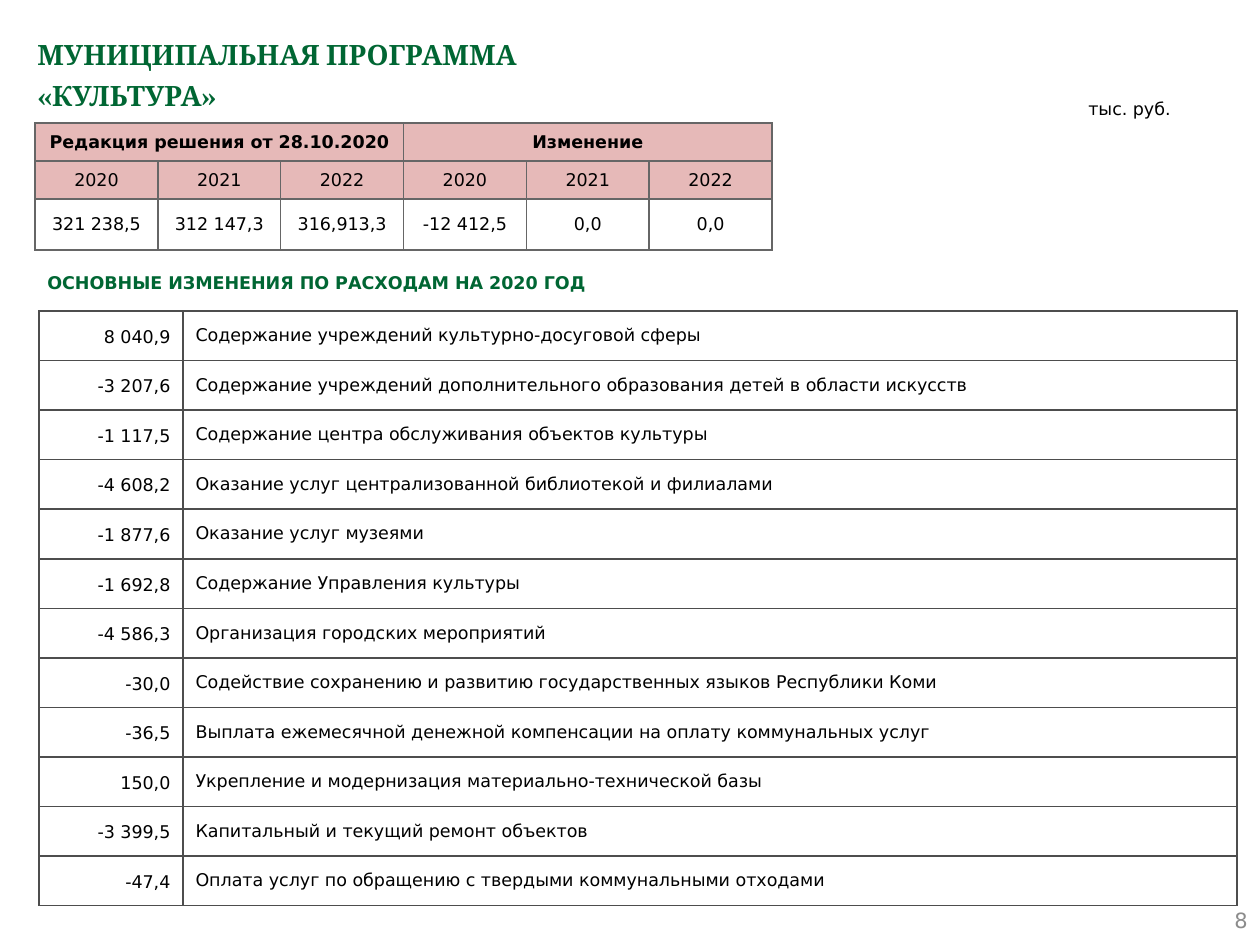
from lxml import etree
from pptx import Presentation
from pptx import util as u
from pptx.dml import color
from pptx.enum import shapes, text
from pptx.oxml import ns

HUES = {"green": "006633", "black": "000000", "gray": "8C8C8C",
        "pink": "E6B9B8", "grid": "4D4D4D", "rim": "666666"}
SANS = "DejaVu Sans"
LEFT, MID, RIGHT = text.PP_ALIGN.LEFT, text.PP_ALIGN.CENTER, text.PP_ALIGN.RIGHT
TOP, CENTER = text.MSO_ANCHOR.TOP, text.MSO_ANCHOR.MIDDLE

TOTALS = [
    ["Редакция решения от 28.10.2020", "", "", "Изменение", "", ""],
    ["2020", "2021", "2022"] * 2,
    ["321 238,5", "312 147,3", "316,913,3", "-12 412,5", "0,0", "0,0"],
]
CHANGES = [
    ("8 040,9", "Содержание учреждений культурно-досуговой сферы"),
    ("-3 207,6", "Содержание учреждений дополнительного образования детей в области искусств"),
    ("-1 117,5", "Содержание центра обслуживания объектов культуры"),
    ("-4 608,2", "Оказание услуг централизованной библиотекой и филиалами"),
    ("-1 877,6", "Оказание услуг музеями"),
    ("-1 692,8", "Содержание Управления культуры"),
    ("-4 586,3", "Организация городских мероприятий"),
    ("-30,0", "Содействие сохранению и развитию государственных языков Республики Коми"),
    ("-36,5", "Выплата ежемесячной денежной компенсации на оплату коммунальных услуг"),
    ("150,0", "Укрепление и модернизация материально-технической базы"),
    ("-3 399,5", "Капитальный и текущий ремонт объектов"),
    ("-47,4", "Оплата услуг по обращению с твердыми коммунальными отходами"),
]


def px(n):
    return u.Emu(round(n * 914400 / 126))


class Page:
    """Holds the style and the current slide."""

    def __init__(self, deck):
        self.slide = deck.slides.add_slide(deck.slide_layouts[6])

    def fill_in(self, frame, words, size=10, hue="black", bold=False,
                align=LEFT, lead=None, font=SANS):
        frame.text = words
        for para in frame.paragraphs:
            para.alignment = align
            if lead:
                para.line_spacing = lead
            for run in para.runs:
                run.font.size = u.Pt(size)
                run.font.name = font
                run.font.bold = bold
                run.font.color.rgb = color.RGBColor.from_string(HUES[hue])

    def label(self, box, words, anchor=TOP, **style):
        frame = self.slide.shapes.add_textbox(*map(px, box)).text_frame
        frame.word_wrap = True
        frame.vertical_anchor = anchor
        self.fill_in(frame, words, **style)

    def banner(self, box, words, **style):
        shape = self.slide.shapes.add_shape(shapes.MSO_SHAPE.PENTAGON, *map(px, box))
        shape.adjustments[0] = 0
        shape.shadow.inherit = False
        shape.fill.background()
        shape.line.fill.background()
        shape.text_frame.vertical_anchor = CENTER
        self.fill_in(shape.text_frame, words, **style)

    def border(self, cell, hue):
        props = cell._tc.get_or_add_tcPr()
        for side in "LRTB":
            line = etree.SubElement(props, ns.qn(f"a:ln{side}"), w="12700")
            fill = etree.SubElement(line, ns.qn("a:solidFill"))
            etree.SubElement(fill, ns.qn("a:srgbClr"), val=HUES[hue])

    def table(self, box, cols, data, hue):
        grid = self.slide.shapes.add_table(len(data), len(cols), *map(px, box)).table
        grid.first_row = grid.horz_banding = False
        for col, wide in zip(grid.columns, cols):
            col.width = px(wide)
        for cell in grid.iter_cells():
            self.border(cell, hue)
            cell.fill.background()
            cell.vertical_anchor = CENTER
        return grid

    def totals(self, box, data):
        grid = self.table(box, [box[2] / 6] * 6, data, "rim")
        for row, high in zip(grid.rows, (38, 38, 51)):
            row.height = px(high)
        for start in (0, 3):
            grid.cell(0, start).merge(grid.cell(0, start + 2))
        for r, row in enumerate(data):
            for c, words in enumerate(row):
                cell = grid.cell(r, c)
                cell.margin_left = cell.margin_right = px(6)
                cell.margin_top = cell.margin_bottom = px(6)
                if r < 2:
                    cell.fill.solid()
                    cell.fill.fore_color.rgb = color.RGBColor.from_string(HUES["pink"])
                if words:
                    self.fill_in(cell.text_frame, words, bold=r == 0, align=MID)

    def changes(self, box, data):
        grid = self.table(box, (144, 1054), data, "grid")
        for r, (amount, name) in enumerate(data):
            self.fill_in(grid.cell(r, 0).text_frame, amount, align=RIGHT, lead=1.15)
            self.fill_in(grid.cell(r, 1).text_frame, name)


def main():
    deck = Presentation()
    deck.slide_width, deck.slide_height = px(1260), px(945)
    page = Page(deck)
    page.label((25, 25, 1211, 100), "МУНИЦИПАЛЬНАЯ ПРОГРАММА \v«КУЛЬТУРА»",
               size=16, hue="green", bold=True, lead=1.2, font="Cambria")
    page.label((966, 895, 294, 50), "8", anchor=CENTER, size=12, hue="gray", align=RIGHT)
    page.banner((35, 255, 620, 54), "ОСНОВНЫЕ ИЗМЕНЕНИЯ ПО РАСХОДАМ НА 2020 ГОД",
                hue="green", bold=True)
    page.changes((39, 311, 1198, 595), CHANGES)
    page.label((1076, 88, 127, 38), "тыс. руб.", lead=1.2)
    page.totals((35, 123, 737, 127), TOTALS)
    deck.save("out.pptx")


if __name__ == "__main__":
    main()
